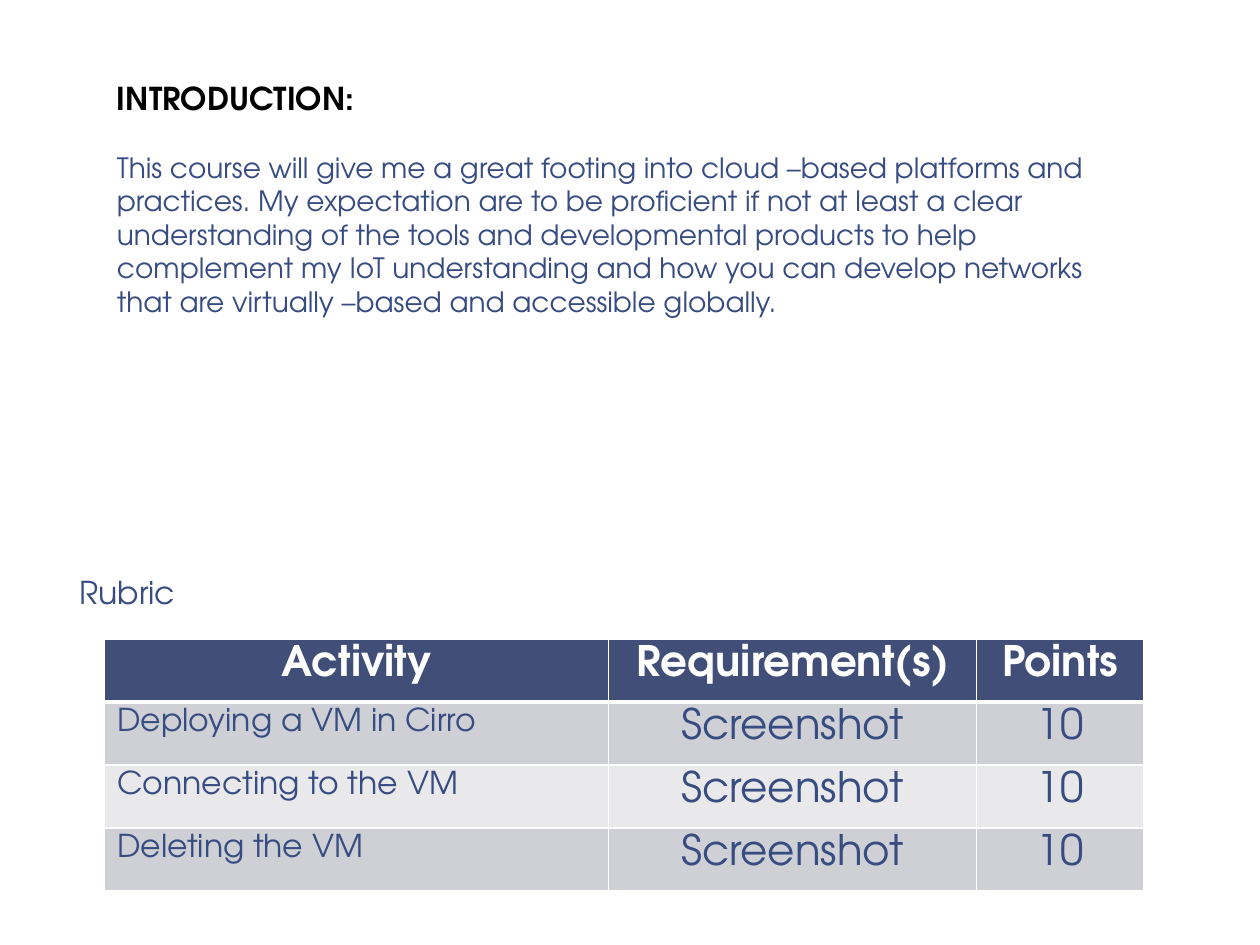
import pptx
import pptx.util
import pptx.dml.color
import pptx.enum.text
import pptx.oxml
import pptx.oxml.ns
import lxml.etree

FONT = "TeX Gyre Adventor"
NAVY, BLUE, WHITE, BLACK = "414E77", "374C81", "FFFFFF", "000000"
BANDS = ["CFD0D6", "E9E9EC"]
WIDE, HIGH = 10, 7.5
LEFT, SPAN = 0.83, 8.25

HEAD = "INTRODUCTION:"
BODY = (
    "This course will give me a great footing into cloud –based platforms and "
    "practices. My expectation are to be proficient if not at least a clear "
    "understanding of the tools and developmental products to help complement "
    "my IoT understanding and how you can develop networks that are "
    "virtually –based and accessible globally."
)
TITLE = "Rubric"
ROWS = [
    ("Activity", "Requirement(s)", "Points"),
    ("Deploying a VM in Cirro", "Screenshot", "10"),
    ("Connecting to the VM", "Screenshot", "10"),
    ("Deleting the VM", "Screenshot", "10"),
]
COLS = [4, 2.92, 1.33]
ROW = 0.41

inch = pptx.util.Inches
point = pptx.util.Pt
align = pptx.enum.text.PP_ALIGN


def color(code):
    return pptx.dml.color.RGBColor.from_string(code)


def write(para, text, size, code, bold=False):
    run = para.add_run()
    run.text = text
    run.font.name = FONT
    run.font.size = point(size)
    run.font.bold = bold
    run.font.color.rgb = color(code)


def add_box(slide, left, top, width, height):
    frame = slide.shapes.add_textbox(*map(inch, (left, top, width, height))).text_frame
    frame.word_wrap = True
    return frame


def add_edge(cell, side, width):
    qn = pptx.oxml.ns.qn
    line = lxml.etree.SubElement(
        cell._tc.get_or_add_tcPr(), qn("a:ln" + side), w=str(point(width)))
    fill = lxml.etree.SubElement(line, qn("a:solidFill"))
    lxml.etree.SubElement(fill, qn("a:srgbClr"), val=WHITE)


def fill_cell(cell, text, row, col):
    head = row == 0
    for side in "LRTB":
        thick = (head and side == "B") or (row == 1 and side == "T")
        add_edge(cell, side, 3 if thick else 1)
    cell.fill.solid()
    cell.fill.fore_color.rgb = color(NAVY if head else BANDS[(row - 1) % 2])
    cell.margin_top = cell.margin_bottom = inch(0.05)
    para = cell.text_frame.paragraphs[0]
    first = col == 0 and not head
    para.alignment = align.LEFT if first else align.CENTER
    write(para, text, 18 if first else 24, WHITE if head else BLUE, head)


def add_grid(slide):
    table = slide.shapes.add_table(
        len(ROWS), len(COLS), inch(LEFT), inch(5.07),
        inch(SPAN), inch(ROW * len(ROWS))).table
    for col, width in enumerate(COLS):
        table.columns[col].width = inch(width)
    for row, texts in enumerate(ROWS):
        table.rows[row].height = inch(ROW)
        for col, text in enumerate(texts):
            fill_cell(table.cell(row, col), text, row, col)


def main():
    deck = pptx.Presentation()
    deck.slide_width, deck.slide_height = inch(WIDE), inch(HIGH)
    slide = deck.slides.add_slide(deck.slide_layouts[6])

    label = add_box(slide, 0.5, 4.5, 9, 0.5)
    label.margin_left = label.margin_right = inch(0.13)
    label.margin_top = label.margin_bottom = inch(0.07)
    para = label.paragraphs[0]
    para.line_spacing = 0.95
    write(para, TITLE, 18, BLUE)

    add_grid(slide)

    intro = add_box(slide, LEFT, 0.58, SPAN, 2.56)
    write(intro.paragraphs[0], HEAD, 18, BLACK, True)
    para = intro.add_paragraph()
    para.space_before = point(19)
    write(para, BODY, 16, BLUE)

    deck.save("out.pptx")


if __name__ == "__main__":
    main()
